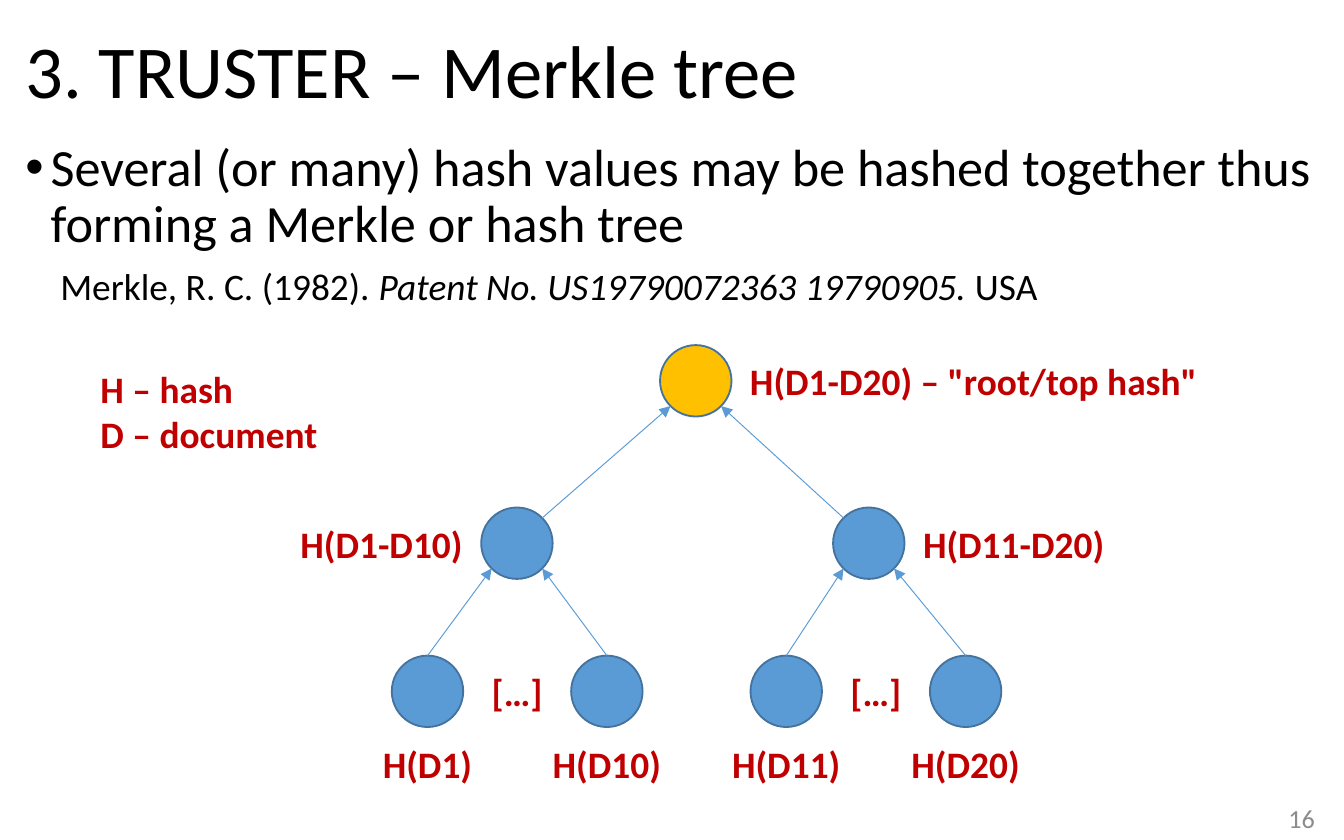
import math
from pptx import Presentation
from pptx.dml.color import RGBColor
from pptx.enum import shapes, text
from pptx.oxml.ns import qn
from pptx.util import Cm, Pt
from lxml import etree

FONT = "Calibri"
BLACK, RED, GREY = "000000", "C00000", "8C8C8C"
BLUE, OUTLINE, GOLD = "5B9BD5", "43739E", "FFC000"
DIAMETER = 1.35
DIAGONAL = DIAMETER / 2 * math.sqrt(0.5)
LEAF_GAP = 3.39
SIDE_GAP = 0.1
LABEL_HEIGHT = 1.47
LEFT, CENTER, RIGHT = text.PP_ALIGN.LEFT, text.PP_ALIGN.CENTER, text.PP_ALIGN.RIGHT


def color(value):
    return RGBColor.from_string(value)


def style(paragraph, size, shade, bold=False):
    for run in paragraph.runs:
        run.font.name = FONT
        run.font.size = Pt(size)
        run.font.bold = bold
        run.font.color.rgb = color(shade)


def add_text(slide, box, wording, size, shade, align=LEFT, bold=False,
             anchor=text.MSO_ANCHOR.MIDDLE):
    frame = slide.shapes.add_textbox(*map(Cm, box)).text_frame
    frame.word_wrap = True
    frame.vertical_anchor = anchor
    frame.text = wording
    for paragraph in frame.paragraphs:
        paragraph.alignment = align
        style(paragraph, size, shade, bold)
    return frame


def add_label(slide, box, wording, align=LEFT):
    add_text(slide, box, wording, 20, RED, align, bold=True)


def add_title(slide, box):
    heading = add_text(slide, box, "3. TRUSTER – Merkle tree", 40, BLACK)
    heading.paragraphs[0].line_spacing = 0.9


def add_body(slide, box):
    body = add_text(slide, box, "Several (or many) hash values may be hashed together "
                    "thus forming a Merkle or hash tree", 28, BLACK,
                    anchor=text.MSO_ANCHOR.TOP)
    statement, citation = body.paragraphs[0], body.add_paragraph()
    for wording, italic in (("Merkle, R. C. (1982).", False),
                            (" Patent No. US19790072363 19790905.", True),
                            (" USA", False)):
        run = citation.add_run()
        run.text = wording
        run.font.italic = italic
    style(citation, 20, BLACK)
    for paragraph, margin, indent in ((statement, 0.48, -0.48), (citation, 0.66, 0)):
        paragraph.line_spacing = 0.9
        paragraph.space_before = Pt(7.5)
        properties = paragraph._p.get_or_add_pPr()
        properties.set("marL", str(Cm(margin)))
        properties.set("indent", str(Cm(indent)))
    properties = statement._p.get_or_add_pPr()
    etree.SubElement(properties, qn("a:buFont"), typeface="Arial")
    etree.SubElement(properties, qn("a:buChar"), char="•")


def add_node(slide, x, y, fill):
    node = slide.shapes.add_shape(shapes.MSO_SHAPE.OVAL, Cm(x - DIAMETER / 2),
                                  Cm(y - DIAMETER / 2), Cm(DIAMETER), Cm(DIAMETER))
    node.shadow.inherit = False
    node.fill.solid()
    node.fill.fore_color.rgb = color(fill)
    node.line.color.rgb = color(OUTLINE)
    node.line.width = Pt(1)
    return node


def add_arrow(slide, start, end):
    arrow = slide.shapes.add_connector(shapes.MSO_CONNECTOR.STRAIGHT,
                                       *map(Cm, (*start, *end)))
    arrow.line.color.rgb = color(BLUE)
    arrow.line.width = Pt(0.5)
    etree.SubElement(arrow.line._get_or_add_ln(), qn("a:tailEnd"), type="triangle")
    etree.SubElement(arrow._element.spPr, qn("a:effectLst"))
    return arrow


def add_side_label(slide, x, y, width, wording, align=LEFT):
    reach = DIAMETER / 2 + SIDE_GAP
    left = x - reach - width if align == RIGHT else x + reach
    add_label(slide, (left, y - LABEL_HEIGHT / 2, width, LABEL_HEIGHT), wording, align)


def add_centered_label(slide, x, y, width, wording):
    add_label(slide, (x - width / 2, y - LABEL_HEIGHT / 2, width, LABEL_HEIGHT),
              wording, CENTER)


def add_tree(slide, left, top):
    root_x, root_y = left + 6.3, top + 0.67
    branch_y, leaf_y = top + 3.74, top + 6.54
    branches = ((left + 2.92, "H(D1-D10)", 3.63, RIGHT, ("H(D1)", "H(D10)")),
                (left + 9.57, "H(D11-D20)", 4.09, LEFT, ("H(D11)", "H(D20)")))
    add_node(slide, root_x, root_y, GOLD)
    add_side_label(slide, root_x, root_y, 9.8, 'H(D1-D20) – "root/top hash"')
    for index, (branch_x, name, width, align, leaves) in enumerate(branches):
        first_x = left + 1.23 + 2 * index * LEAF_GAP
        inward = 1 if branch_x < root_x else -1
        add_node(slide, branch_x, branch_y, BLUE)
        add_side_label(slide, branch_x, branch_y, width, name, align)
        add_arrow(slide, (branch_x + inward * DIAGONAL, branch_y - DIAGONAL),
                  (root_x - inward * DIAGONAL, root_y + DIAGONAL))
        add_centered_label(slide, first_x + LEAF_GAP / 2, leaf_y, 1.83, "[…]")
        for side, leaf_name in enumerate(leaves):
            leaf_x = first_x + side * LEAF_GAP
            leaf = add_node(slide, leaf_x, leaf_y, BLUE)
            link = add_arrow(slide, (leaf_x, leaf_y - DIAMETER / 2),
                             (branch_x + (2 * side - 1) * DIAGONAL, branch_y + DIAGONAL))
            link.begin_connect(leaf, 0)
            add_centered_label(slide, leaf_x, leaf_y + 1.36, 2.8, leaf_name)


def main():
    deck = Presentation()
    deck.slide_width, deck.slide_height = Cm(25.4), Cm(15.88)
    slide = deck.slides.add_slide(deck.slide_layouts[6])
    add_title(slide, (0.23, 0.28, 24.87, 2.24))
    add_body(slide, (0.23, 2.54, 24.87, 3.4))
    add_tree(slide, 6.85, 6.53)
    add_label(slide, (1.65, 6.71, 5.74, 2.13), "H – hash\nD – document")
    add_text(slide, (19.38, 15.11, 5.72, 0.71), "16", 14, GREY, RIGHT)
    deck.save("out.pptx")


if __name__ == "__main__":
    main()
